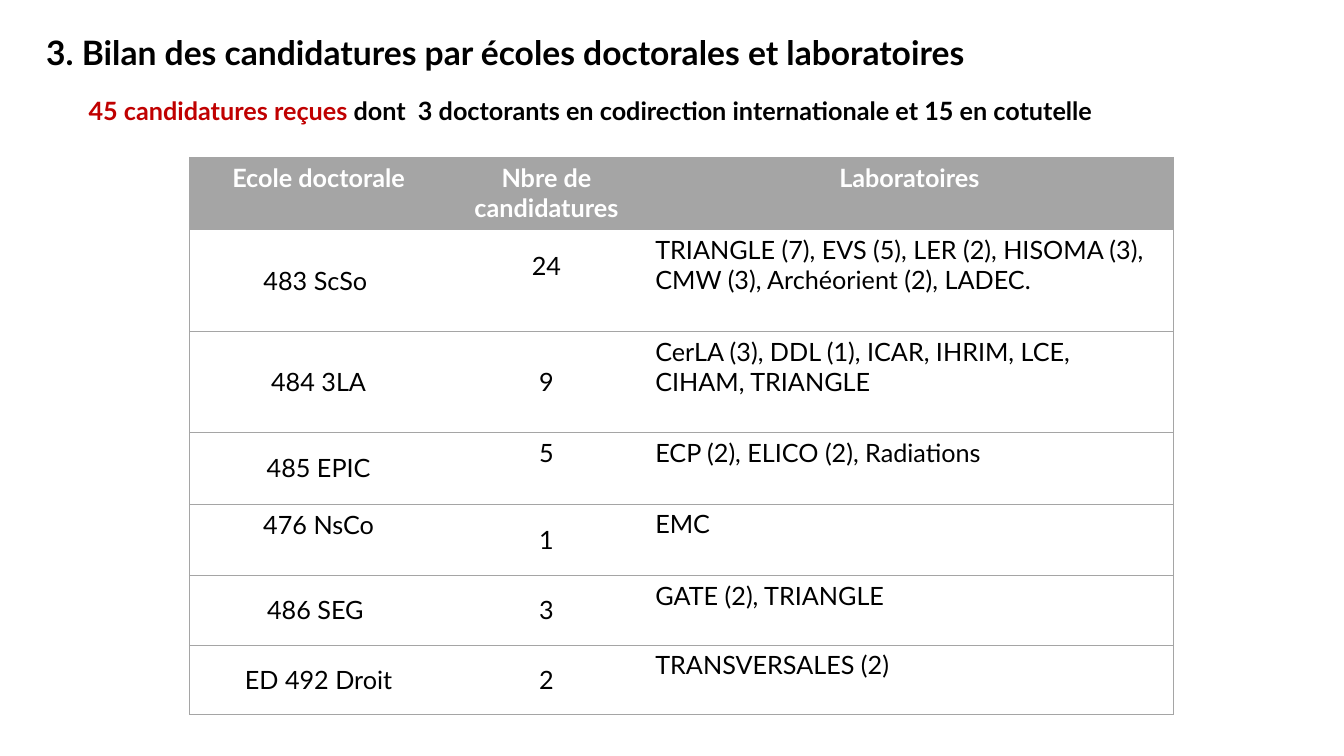
from lxml import etree
from pptx import Presentation
from pptx.dml.color import RGBColor
from pptx.enum import text
from pptx.oxml import ns
from pptx.util import Inches, Pt

THEME = {
    "font": "Lato", "title": 24, "body": 18, "rule": 0.5,
    "black": "000000", "white": "FFFFFF", "red": "C00000", "gray": "A5A5A5",
}
TITLE = [("3. Bilan des candidatures par écoles doctorales et laboratoires", "black")]
SUMMARY = [
    ("45 candidatures reçues ", "red"),
    ("dont  3 doctorants en codirection internationale et 15 en cotutelle", "black"),
]
HEADINGS = ("Ecole doctorale", "Nbre de candidatures", "Laboratoires")
SCHOOLS = [
    ("483 ScSo ", "24",
     "TRIANGLE (7), EVS (5), LER (2), HISOMA (3), CMW (3), Archéorient (2), LADEC."),
    ("484 3LA", "9", "CerLA (3), DDL (1), ICAR, IHRIM, LCE, CIHAM, TRIANGLE"),
    ("485 EPIC", "5", "ECP (2), ELICO (2), Radiations"),
    ("476 NsCo", "1", "EMC"),
    ("486 SEG ", "3", "GATE (2), TRIANGLE"),
    ("ED 492 Droit", "2", "TRANSVERSALES (2)"),
]
RAISED = {"24", "5", "476 NsCo"}
COLUMN_WIDTHS = (2.56, 1.96, 5.24)
ROW_HEIGHTS = (0.72, 1.01, 1.0, 0.71, 0.71, 0.69, 0.69)
LINE_HEIGHT = 0.3


def color(name):
    return RGBColor.from_string(THEME[name])


def style(paragraph, size, bold):
    paragraph.font.name = THEME["font"]
    paragraph.font.size = Pt(THEME[size])
    paragraph.font.bold = bold


def add_heading(slide, runs, size, left, top, width, height):
    frame = slide.shapes.add_textbox(*map(Inches, (left, top, width, height))).text_frame
    frame.word_wrap = True
    frame.auto_size = text.MSO_AUTO_SIZE.SHAPE_TO_FIT_TEXT
    paragraph = frame.paragraphs[0]
    paragraph.space_after = Pt(6)
    style(paragraph, size, True)
    for words, tint in runs:
        run = paragraph.add_run()
        run.text = words
        run.font.color.rgb = color(tint)


def set_borders(cell, visible):
    properties = cell._tc.get_or_add_tcPr()
    for index, side in enumerate("LRTB"):
        line = etree.Element(ns.qn(f"a:ln{side}"), w=str(Pt(THEME["rule"])))
        if side in visible:
            fill = etree.SubElement(line, ns.qn("a:solidFill"))
            etree.SubElement(fill, ns.qn("a:srgbClr"), val=THEME["gray"])
        else:
            etree.SubElement(line, ns.qn("a:noFill"))
        properties.insert(index, line)


def fill_cell(cell, words, header, column):
    last = len(HEADINGS) - 1
    cell.text = words
    paragraph = cell.text_frame.paragraphs[0]
    style(paragraph, "body", header)
    paragraph.font.color.rgb = color("white" if header else "black")
    centred = header or column < last
    paragraph.alignment = text.PP_ALIGN.CENTER if centred else text.PP_ALIGN.LEFT
    middle = not header and column < last
    cell.vertical_anchor = text.MSO_ANCHOR.MIDDLE if middle else text.MSO_ANCHOR.TOP
    if words in RAISED:
        cell.margin_bottom = Inches(0.05 + LINE_HEIGHT)
    if header:
        cell.fill.solid()
        cell.fill.fore_color.rgb = color("gray")
    else:
        cell.fill.background()
    set_borders(cell, "TB" + {0: "L", last: "R"}.get(column, ""))


def add_schools(slide, left, top):
    rows = [HEADINGS, *SCHOOLS]
    table = slide.shapes.add_table(
        len(rows), len(HEADINGS), Inches(left), Inches(top),
        Inches(sum(COLUMN_WIDTHS)), Inches(sum(ROW_HEIGHTS))).table
    table.first_row = table.horz_banding = False
    for column, width in zip(table.columns, COLUMN_WIDTHS):
        column.width = Inches(width)
    for row, height in zip(table.rows, ROW_HEIGHTS):
        row.height = Inches(height)
    for r, row in enumerate(rows):
        for c, words in enumerate(row):
            fill_cell(table.cell(r, c), words, r == 0, c)


def main():
    deck = Presentation()
    deck.slide_width, deck.slide_height = Inches(13.33), Inches(7.5)
    slide = deck.slides.add_slide(deck.slide_layouts[6])
    add_heading(slide, TITLE, "title", 0.36, 0.27, 12.61, 0.5)
    add_schools(slide, 1.88, 1.56)
    add_heading(slide, SUMMARY, "body", 0.78, 0.9, 11.08, 0.66)
    deck.save("out.pptx")


if __name__ == "__main__":
    main()
